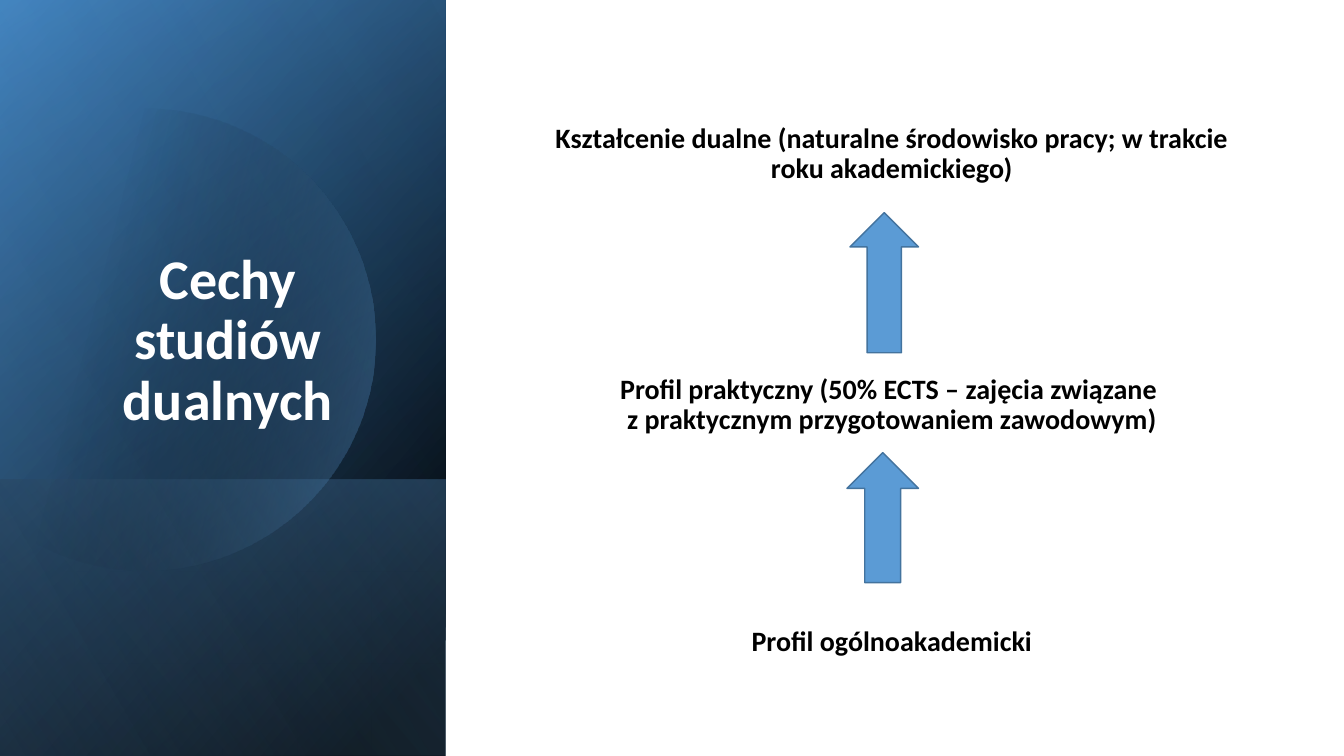
from dataclasses import dataclass
from math import acos, cos, degrees, radians, sin

from lxml.etree import SubElement
from pptx import Presentation
from pptx.dml.color import RGBColor
from pptx.enum.shapes import MSO_SHAPE
from pptx.enum.text import MSO_ANCHOR, PP_ALIGN
from pptx.oxml.ns import qn
from pptx.shapes.autoshape import Shape
from pptx.slide import Slide
from pptx.util import Inches, Pt

PANEL_W, SLIDE_W, SLIDE_H = 4.42, 13.33, 7.5
FONT = "Calibri"


@dataclass
class Stop:
    position: int
    color: str
    alpha: int = 100


@dataclass
class Layer:
    top: float
    height: float
    angle: int
    stops: tuple[Stop, Stop]


@dataclass
class Label:
    text: str
    left: float
    top: float
    width: float
    height: float
    size: int = 20
    color: str = "000000"
    anchor: MSO_ANCHOR = MSO_ANCHOR.MIDDLE


@dataclass
class Arrow:
    left: float
    top: float
    width: float
    height: float


LAYERS = [
    Layer(0, SLIDE_H, 50, (Stop(8, "000000"), Stop(100, "2E75B6"))),
    Layer(0, SLIDE_H, 30, (Stop(0, "000000", 0), Stop(99, "5B9BD5", 46))),
    Layer(4.76, 2.74, 130, (Stop(2, "5B9BD5", 29), Stop(100, "000000", 30))),
]
TOP_LAYER = Layer(0, SLIDE_H, 120, (Stop(0, "000000", 0), Stop(99, "9DC3E6", 11)))
DISC_STOPS = (Stop(29, "000000", 0), Stop(100, "5B9BD5", 43))

LABELS = [
    Label("Cechy studiów dualnych", 0.61, 0.64, 3.3, 3.7, 40, "FFFFFF", MSO_ANCHOR.BOTTOM),
    Label("Kształcenie dualne (naturalne środowisko pracy; w trakcie roku akademickiego)",
          5.26, 1.13, 7.17, 0.8),
    Label("Profil praktyczny (50% ECTS – zajęcia związane \vz praktycznym przygotowaniem zawodowym)",
          5.26, 3.62, 7.17, 0.8),
    Label("Profil ogólnoakademicki", 5.26, 5.97, 7.17, 0.8),
]
ARROWS = [Arrow(8.4, 4.49, 0.71, 1.29), Arrow(8.43, 2.11, 0.68, 1.39)]


def rgb(color: str) -> RGBColor:
    return RGBColor.from_string(color)


def fill_gradient(s: Shape, stops: tuple[Stop, Stop], angle: int) -> None:
    s.shadow.inherit = False
    s.line.fill.background()
    s.fill.gradient()
    s.fill.gradient_angle = 360 - angle
    for target, stop in zip(s.fill.gradient_stops, stops):
        target.position = stop.position / 100
        target.color.rgb = rgb(stop.color)
    for clr, stop in zip(s._element.spPr.iter(qn("a:srgbClr")), stops):
        if stop.alpha < 100:
            SubElement(clr, qn("a:alpha")).set("val", str(stop.alpha * 1000))


def add_layer(slide: Slide, layer: Layer) -> None:
    """Add a panel layer, turned a quarter and mirrored so its gradient turns too."""
    left = (PANEL_W - layer.height) / 2
    top = layer.top + (layer.height - PANEL_W) / 2
    s = slide.shapes.add_shape(MSO_SHAPE.RECTANGLE, Inches(left), Inches(top),
                               Inches(layer.height), Inches(PANEL_W))
    s.rotation = 90
    s._element.spPr.find(qn("a:xfrm")).set("flipH", "1")
    fill_gradient(s, layer.stops, layer.angle)


def add_disc(slide: Slide, cx: float, cy: float, radius: float) -> None:
    """Add a disc cut off at the left edge of the slide."""
    limit = degrees(acos(-cx / radius))
    steps = 120
    angles = [radians(limit * (2 * i / steps - 1)) for i in range(steps + 1)]
    points = [(Inches(cx + radius * cos(a)), Inches(cy + radius * sin(a))) for a in angles]
    builder = slide.shapes.build_freeform(*points[0])
    builder.add_line_segments(points[1:], close=True)
    fill_gradient(builder.convert_to_shape(), DISC_STOPS, 14)


def add_label(slide: Slide, label: Label) -> None:
    s = slide.shapes.add_textbox(Inches(label.left), Inches(label.top),
                                 Inches(label.width), Inches(label.height))
    tf = s.text_frame
    tf.word_wrap = True
    tf.vertical_anchor = label.anchor
    tf.text = label.text
    p = tf.paragraphs[0]
    p.alignment = PP_ALIGN.CENTER
    p.line_spacing = 0.9
    for r in p.runs:
        r.font.name = FONT
        r.font.size = Pt(label.size)
        r.font.bold = True
        r.font.color.rgb = rgb(label.color)


def add_arrow(slide: Slide, arrow: Arrow) -> None:
    s = slide.shapes.add_shape(MSO_SHAPE.UP_ARROW, Inches(arrow.left), Inches(arrow.top),
                               Inches(arrow.width), Inches(arrow.height))
    s.shadow.inherit = False
    s.fill.solid()
    s.fill.fore_color.rgb = rgb("5B9BD5")
    s.line.color.rgb = rgb("43739E")
    s.line.width = Pt(1)


def main() -> None:
    prs = Presentation()
    prs.slide_width, prs.slide_height = Inches(SLIDE_W), Inches(SLIDE_H)
    slide = prs.slides.add_slide(prs.slide_layouts[6])

    # Blue side panel
    for layer in LAYERS:
        add_layer(slide, layer)
    add_disc(slide, 1.43, 3.37, 2.29)
    add_layer(slide, TOP_LAYER)

    # Title and the three levels
    for label in LABELS:
        add_label(slide, label)

    # Arrows between the levels
    for arrow in ARROWS:
        add_arrow(slide, arrow)

    prs.save("out.pptx")


if __name__ == "__main__":
    main()
